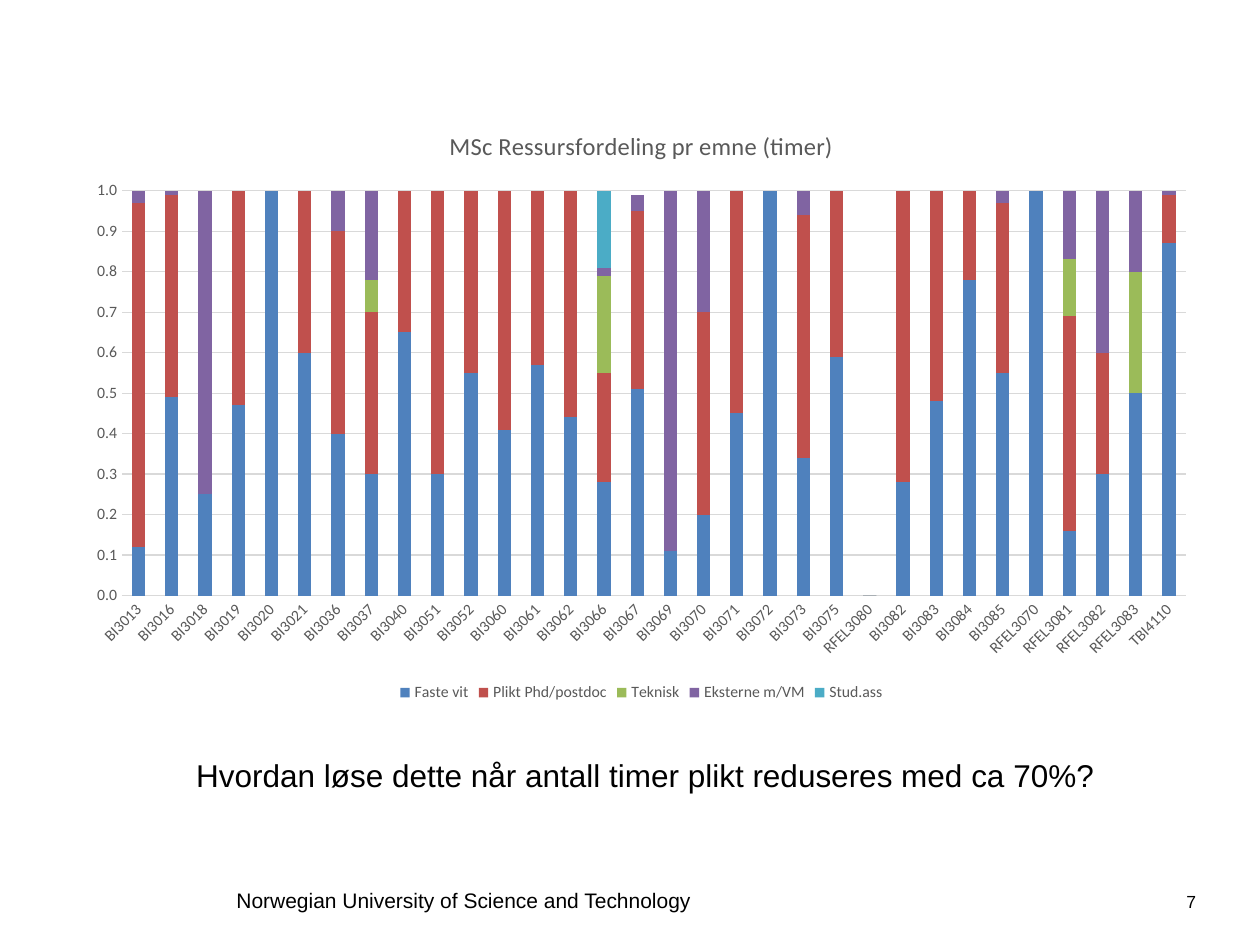
"""Build a slide with a stacked column chart of staff hours per course."""
import pptx
import pptx.chart.data
import pptx.dml.color
import pptx.enum.chart
import pptx.enum.text
import pptx.util

Pt = pptx.util.Pt
COLOURS = {
    "text": "000000",
    "label": "595959",
    "grid": "D9D9D9",
    "Faste vit": "4F81BD",
    "Plikt Phd/postdoc": "C0504D",
    "Teknisk": "9BBB59",
    "Eksterne m/VM": "8064A2",
    "Stud.ass": "4BACC6",
}
COURSES = (
    "BI3013 BI3016 BI3018 BI3019 BI3020 BI3021 BI3036 BI3037 "
    "BI3040 BI3051 BI3052 BI3060 BI3061 BI3062 BI3066 BI3067 "
    "BI3069 BI3070 BI3071 BI3072 BI3073 BI3075 RFEL3080 BI3082 "
    "BI3083 BI3084 BI3085 RFEL3070 RFEL3081 RFEL3082 RFEL3083 TBI4110"
).split()
SHARES = {
    "Faste vit": [
        0.12, 0.49, 0.25, 0.47, 1, 0.6, 0.4, 0.3,
        0.65, 0.3, 0.55, 0.41, 0.57, 0.44, 0.28, 0.51,
        0.11, 0.2, 0.45, 1, 0.34, 0.59, 0, 0.28,
        0.48, 0.78, 0.55, 1, 0.16, 0.3, 0.5, 0.87],
    "Plikt Phd/postdoc": [
        0.85, 0.5, 0, 0.53, 0, 0.4, 0.5, 0.4,
        0.35, 0.7, 0.45, 0.59, 0.43, 0.56, 0.27, 0.44,
        0, 0.5, 0.55, 0, 0.6, 0.41, 0, 0.72,
        0.52, 0.22, 0.42, 0, 0.53, 0.3, 0, 0.12],
    "Teknisk": {"BI3037": 0.08, "BI3066": 0.24, "RFEL3081": 0.14, "RFEL3083": 0.3},
    "Eksterne m/VM": {
        "BI3013": 0.04, "BI3016": 0.01, "BI3018": 0.75, "BI3036": 0.1,
        "BI3037": 0.24, "BI3066": 0.02, "BI3067": 0.04, "BI3069": 0.89,
        "BI3070": 0.3, "BI3073": 0.06, "BI3085": 0.03, "RFEL3081": 0.17,
        "RFEL3082": 0.4, "RFEL3083": 0.2, "TBI4110": 0.01},
    "Stud.ass": {"BI3066": 0.2},
}


def colour(name):
    """Return the named colour."""
    return pptx.dml.color.RGBColor.from_string(COLOURS[name])


def style_font(font, name, size, colour_name):
    """Set face, size and colour of a font."""
    font.name = name
    font.size = Pt(size)
    font.bold = False
    font.color.rgb = colour(colour_name)


def style_line(line):
    """Give a line the thin grid style."""
    line.color.rgb = colour("grid")
    line.width = Pt(0.75)


def add_text(page, frame, text, size, centred=False, wrap=True, grow=False):
    """Add a text box with one paragraph."""
    box = page.shapes.add_textbox(*map(Pt, frame))
    box.text_frame.word_wrap = wrap
    if grow:
        box.text_frame.auto_size = pptx.enum.text.MSO_AUTO_SIZE.SHAPE_TO_FIT_TEXT
    para = box.text_frame.paragraphs[0]
    if centred:
        para.alignment = pptx.enum.text.PP_ALIGN.CENTER
    span = para.add_run()
    span.text = text
    style_font(span.font, "Arial", size, "text")


def style_axes(chart):
    """Style both axes and slant the course labels."""
    for axis in (chart.category_axis, chart.value_axis):
        axis.major_tick_mark = pptx.enum.chart.XL_TICK_MARK.NONE
        axis.minor_tick_mark = pptx.enum.chart.XL_TICK_MARK.NONE
        style_font(axis.tick_labels.font, "Calibri", 9, "label")
    style_line(chart.category_axis.format.line)
    slant = chart.category_axis.tick_labels.font._element.getparent().getparent().getparent()
    slant.bodyPr.set("rot", "-2700000")
    hours = chart.value_axis
    hours.minimum_scale, hours.maximum_scale, hours.major_unit = 0, 1, 0.1
    hours.tick_labels.number_format = "0.0"
    hours.tick_labels.number_format_is_linked = False
    hours.format.line.fill.background()
    style_line(hours.major_gridlines.format.line)


def add_share_chart(page, frame, title):
    """Add the stacked columns with title and legend."""
    data = pptx.chart.data.CategoryChartData(number_format="0.00")
    data.categories = COURSES
    for name, shares in SHARES.items():
        if isinstance(shares, dict):
            shares = [shares.get(course, 0) for course in COURSES]
        data.add_series(name, shares)
    kind = pptx.enum.chart.XL_CHART_TYPE.COLUMN_STACKED
    chart = page.shapes.add_chart(kind, *map(Pt, frame), data).chart
    style_font(chart.font, "Calibri", 10, "text")
    chart.has_title = True
    span = chart.chart_title.text_frame.paragraphs[0].add_run()
    span.text = title
    style_font(span.font, "Calibri", 14, "label")
    chart.chart_title.include_in_layout = False
    chart.has_legend = True
    chart.legend.position = pptx.enum.chart.XL_LEGEND_POSITION.BOTTOM
    chart.legend.include_in_layout = False
    style_font(chart.legend.font, "Calibri", 9, "label")
    plot = chart.plots[0]
    plot.gap_width, plot.overlap, plot.vary_by_categories = 150, 100, False
    for series in plot.series:
        series.format.fill.solid()
        series.format.fill.fore_color.rgb = colour(series.name)
        series.invert_if_negative = False
    style_axes(chart)


def main():
    """Build and save the deck."""
    deck = pptx.Presentation()
    deck.slide_width, deck.slide_height = Pt(720), Pt(540)
    page = deck.slides.add_slide(deck.slide_layouts[6])
    add_text(page, (128, 503.5, 300, 21.6),
             "Norwegian University of Science and Technology", 12, grow=True)
    add_text(page, (667.5, 505.5, 26.5, 28.8), "7", 10, centred=True)
    add_share_chart(page, (42.5, 60.5, 648, 343.5),
                    "MSc Ressursfordeling pr emne (timer)")
    add_text(page, (105, 428.5, 538, 29),
             "Hvordan løse dette når antall timer plikt reduseres med ca 70%?",
             18, wrap=False, grow=True)
    deck.save("out.pptx")


if __name__ == "__main__":
    main()
